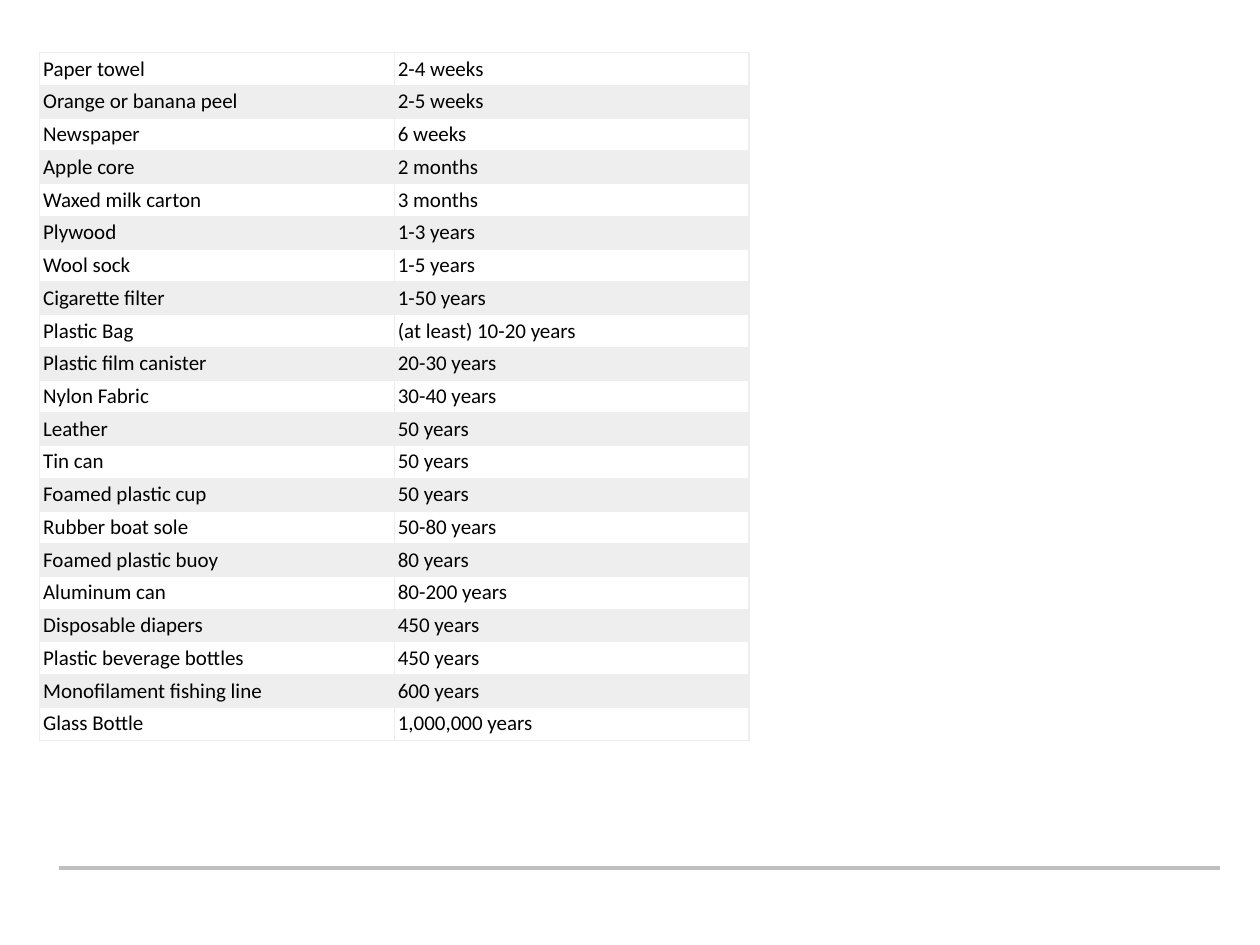
import pptx
import pptx.util
import pptx.dml.color
import pptx.enum.shapes
import pptx.enum.text
import pptx.oxml
import pptx.oxml.ns

Cm = pptx.util.Cm
Pt = pptx.util.Pt
RGB = pptx.dml.color.RGBColor.from_string

hues = {"white": "FFFFFF", "band": "EEEEEE", "rule": "BFBFBF", "text": "000000"}

items = [
    ("Paper towel", "2-4 weeks"),
    ("Orange or banana peel", "2-5 weeks"),
    ("Newspaper", "6 weeks"),
    ("Apple core", "2 months"),
    ("Waxed milk carton", "3 months"),
    ("Plywood", "1-3 years"),
    ("Wool sock", "1-5 years"),
    ("Cigarette filter", "1-50 years"),
    ("Plastic Bag", "(at least) 10-20 years"),
    ("Plastic film canister", "20-30 years"),
    ("Nylon Fabric", "30-40 years"),
    ("Leather", "50 years"),
    ("Tin can", "50 years"),
    ("Foamed plastic cup", "50 years"),
    ("Rubber boat sole", "50-80 years"),
    ("Foamed plastic buoy", "80 years"),
    ("Aluminum can", "80-200 years"),
    ("Disposable diapers", "450 years"),
    ("Plastic beverage bottles", "450 years"),
    ("Monofilament fishing line", "600 years"),
    ("Glass Bottle", "1,000,000 years"),
]


def edge(cell):
    props = cell._tc.get_or_add_tcPr()
    for side in ("lnL", "lnR", "lnT", "lnB"):
        props.append(pptx.oxml.parse_xml(
            f'<a:{side} {pptx.oxml.ns.nsdecls("a")} w="{Pt(0.75)}">'
            f'<a:solidFill><a:srgbClr val="{hues["band"]}"/></a:solidFill></a:{side}>'))


deck = pptx.Presentation()
deck.slide_width = Cm(25.4)
deck.slide_height = Cm(19.05)
slide = deck.slides.add_slide(deck.slide_layouts[6])

rule = slide.shapes.add_connector(
    pptx.enum.shapes.MSO_CONNECTOR.STRAIGHT, Cm(1.19), Cm(17.5), Cm(24.59), Cm(17.5))
rule.line.color.rgb = RGB(hues["rule"])
rule.line.width = Pt(2.25)
rule._element.spPr.append(pptx.oxml.parse_xml(
    f'<a:effectLst {pptx.oxml.ns.nsdecls("a")}/>'))

high = Cm(0.66)
wide = Cm(7.15)
frame = slide.shapes.add_table(
    len(items), 2, Cm(0.8), Cm(1.06), wide * 2, high * len(items))
table = frame.table
table.first_row = False
table.horz_banding = False
for col in table.columns:
    col.width = wide

for row, pair in enumerate(items):
    table.rows[row].height = high
    for col, word in enumerate(pair):
        cell = table.cell(row, col)
        edge(cell)
        cell.fill.solid()
        cell.fill.fore_color.rgb = RGB(hues["band" if row % 2 else "white"])
        cell.margin_left = cell.margin_right = Cm(0.07)
        cell.margin_top = cell.margin_bottom = Cm(0.07)
        cell.vertical_anchor = pptx.enum.text.MSO_ANCHOR.MIDDLE
        run = cell.text_frame.paragraphs[0].add_run()
        run.text = word
        run.font.name = "Calibri"
        run.font.size = Pt(12)
        run.font.color.rgb = RGB(hues["text"])

deck.save("out.pptx")
